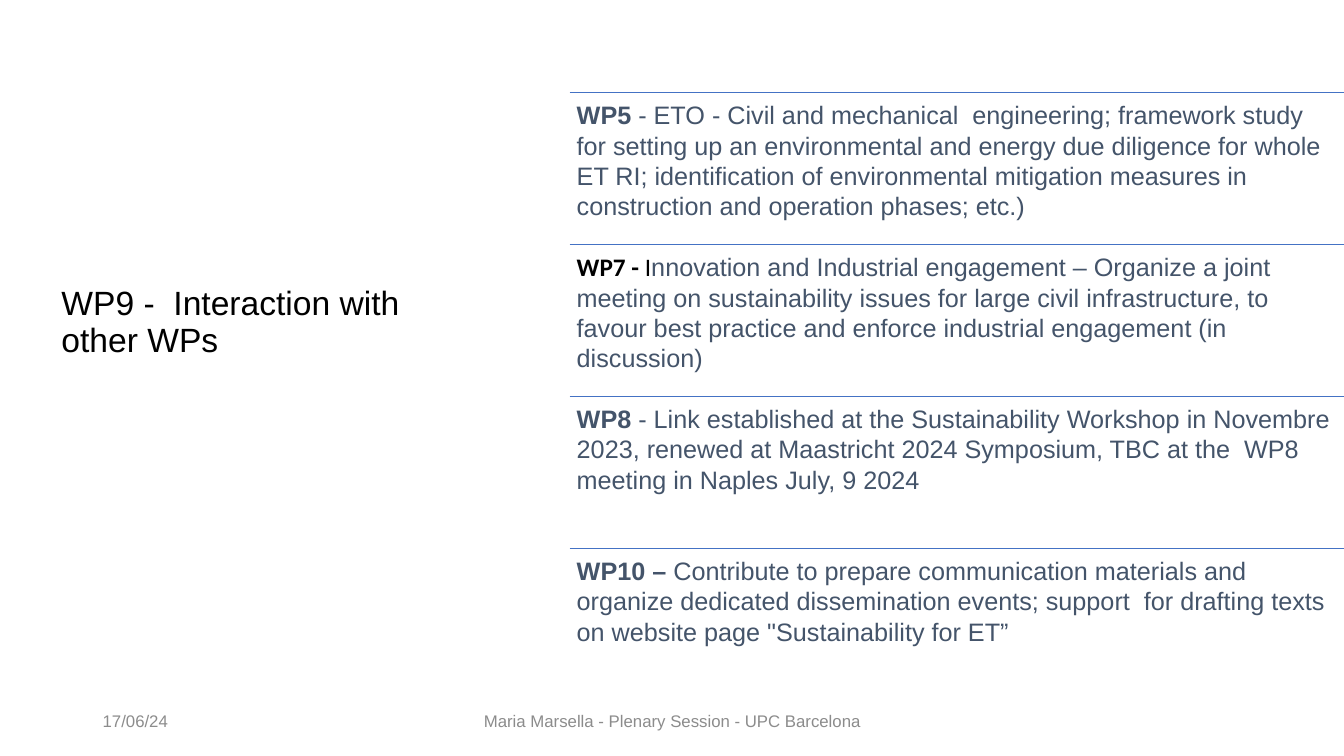
from dataclasses import dataclass

from lxml.etree import SubElement
from pptx import Presentation
from pptx.dml.color import RGBColor
from pptx.enum.shapes import MSO_CONNECTOR
from pptx.enum.text import MSO_ANCHOR, MSO_AUTO_SIZE, PP_ALIGN
from pptx.oxml.ns import qn
from pptx.util import Inches, Pt


@dataclass(frozen=True)
class Theme:
    font: str = "Arial"
    accent_font: str = "Calibri"
    black: str = "000000"
    body: str = "44546A"
    rule: str = "4472C4"
    footer: str = "8C8C8C"
    title_size: int = 24
    body_size: int = 18
    footer_size: int = 12


theme = Theme()


def add_run(paragraph, text, size, color, font=theme.font, bold=False):
    run = paragraph.add_run()
    run.text = text
    run.font.name = font
    run.font.size = Pt(size)
    run.font.bold = bold
    run.font.color.rgb = RGBColor.from_string(color)


def prepare_frame(shape, anchor, margin=0.1):
    """Set wrapping, anchor and side margins; return the first paragraph."""
    frame = shape.text_frame
    frame.word_wrap = True
    frame.auto_size = MSO_AUTO_SIZE.NONE
    frame.vertical_anchor = anchor
    frame.margin_left = frame.margin_right = Inches(margin)
    frame.margin_top = frame.margin_bottom = Inches(min(margin, 0.07))
    return frame.paragraphs[0]


presentation = Presentation()
presentation.slide_width = Inches(13.33)
presentation.slide_height = Inches(7.5)
slide = presentation.slides.add_slide(presentation.slide_layouts[5])

# Title
title = slide.shapes.title
title.left, title.top = Inches(0.51), Inches(2.48)
title.width, title.height = Inches(4.26), Inches(1.45)
paragraph = prepare_frame(title, MSO_ANCHOR.MIDDLE)
paragraph.alignment = PP_ALIGN.LEFT
paragraph.line_spacing = 0.9
add_run(paragraph, "WP9 -  Interaction with other WPs", theme.title_size, theme.black)

# Work packages: each run is text, colour, font, bold
strong = (theme.body, theme.font, True)
plain = (theme.body, theme.font, False)
work_packages = [
    [("WP5", *strong),
     (" - ETO - Civil and mechanical  engineering; framework study for setting up "
      "an environmental and energy due diligence for whole ET RI; identification of "
      "environmental mitigation measures in construction and operation phases; etc.)",
      *plain)],
    [("WP7 - ", theme.black, theme.accent_font, True),
     ("I", theme.black, theme.accent_font, False),
     ("nnovation and Industrial engagement – Organize a joint meeting on "
      "sustainability issues for large civil infrastructure, to favour best practice "
      "and enforce industrial engagement (in discussion)", *plain)],
    [("WP8", *strong),
     (" - Link established at the Sustainability Workshop in Novembre 2023, renewed "
      "at Maastricht 2024 Symposium, TBC at the  WP8 meeting in Naples July, 9 2024",
      *plain)],
    [("WP10 –", *strong),
     (" Contribute to prepare communication materials and organize dedicated "
      "dissemination events; support  for drafting texts on website page "
      "\"Sustainability for ET”", *plain)],
]
list_left, list_top = Inches(5.65), Inches(0.92)
row_height = Inches(1.507)
list_width = presentation.slide_width - list_left

for row, runs in enumerate(work_packages):
    top = list_top + row * row_height
    rule = slide.shapes.add_connector(
        MSO_CONNECTOR.STRAIGHT, list_left, top, presentation.slide_width, top)
    rule.line.color.rgb = RGBColor.from_string(theme.rule)
    rule.line.width = Pt(1)
    SubElement(rule._element.spPr, qn("a:effectLst"))

    box = slide.shapes.add_textbox(list_left, top, list_width, row_height)
    paragraph = prepare_frame(box, MSO_ANCHOR.TOP, margin=0.07)
    for text, color, font, bold in runs:
        add_run(paragraph, text, theme.body_size, color, font, bold)

# Footer
footers = [
    (0.92, 3, PP_ALIGN.LEFT, "17/06/24"),
    (4.42, 4.5, PP_ALIGN.CENTER, "Maria Marsella - Plenary Session - UPC Barcelona"),
]
for left, width, alignment, text in footers:
    box = slide.shapes.add_textbox(Inches(left), Inches(6.95), Inches(width), Inches(0.4))
    paragraph = prepare_frame(box, MSO_ANCHOR.MIDDLE)
    paragraph.alignment = alignment
    add_run(paragraph, text, theme.footer_size, theme.footer)

presentation.save("out.pptx")
